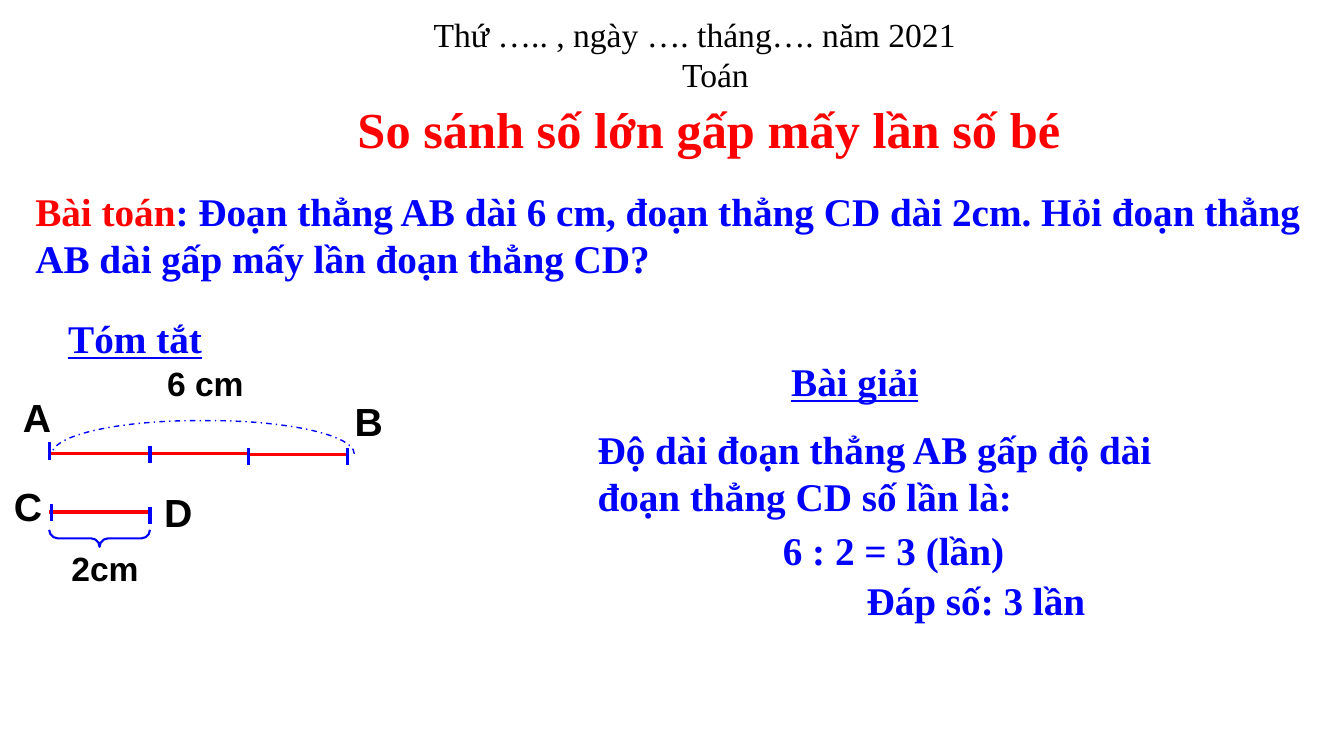
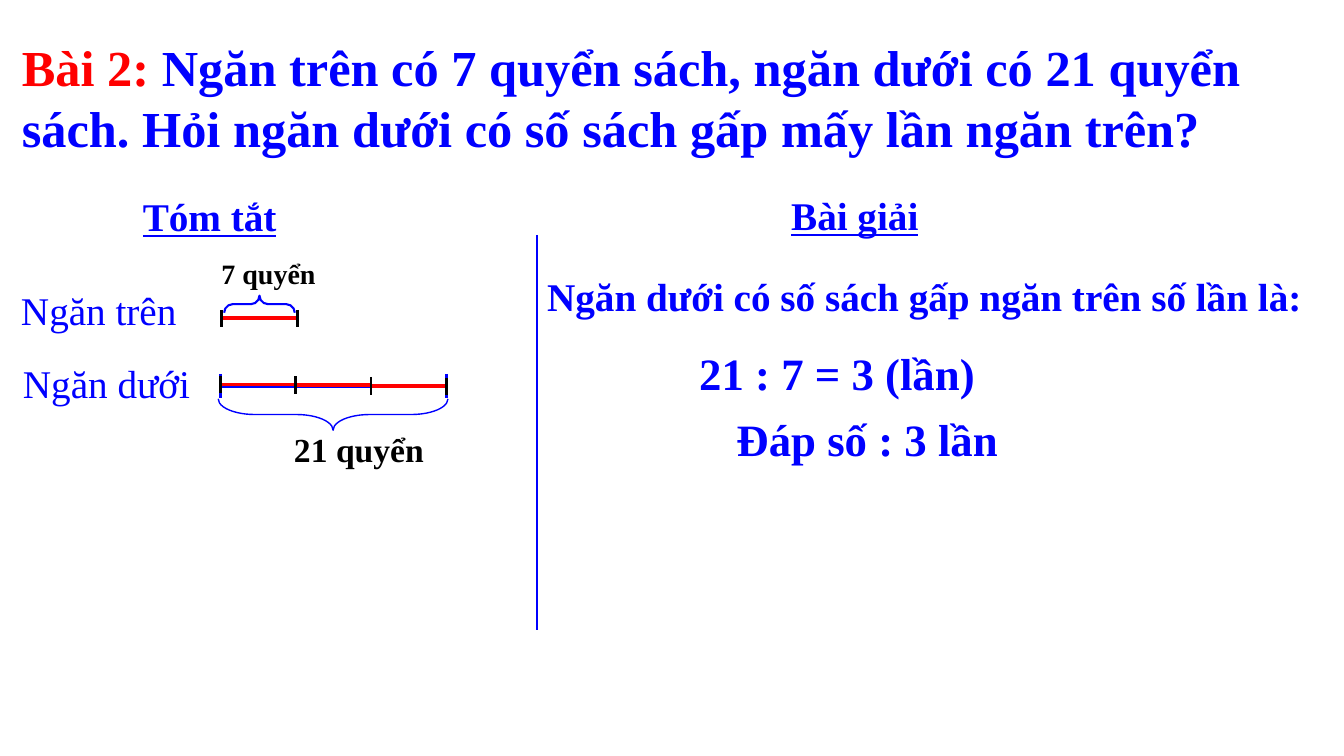
import pptx
import pptx.dml.color
import pptx.enum.dml
import pptx.enum.shapes
import pptx.enum.text
import pptx.oxml
import pptx.oxml.ns
import pptx.util

Cm = pptx.util.Cm
Pt = pptx.util.Pt
SHAPE = pptx.enum.shapes.MSO_SHAPE
COLORS = {"red": "FF0000", "blue": "0000FF", "black": "000000"}
SERIF, SANS = "Times New Roman", "Arial"


def rgb(name):
    return pptx.dml.color.RGBColor.from_string(COLORS[name])


class Lesson:
    """Holds the lesson's style and the slide being drawn."""

    def __init__(self):
        self.prs = pptx.Presentation()
        self.prs.slide_width = Cm(33.87)
        self.prs.slide_height = Cm(19.05)
        self.s = None

    def new_slide(self):
        self.s = self.prs.slides.add_slide(self.prs.slide_layouts[6])

    def format(self, r, size, color, font, bold, underline=False):
        r.font.size = Pt(size)
        r.font.name = font
        r.font.bold = bold
        r.font.underline = underline
        r.font.color.rgb = rgb(color)

    def text(self, x, y, w, h, text, size=28, color="blue", font=SERIF,
             bold=True, underline=False, lead=""):
        sp = self.s.shapes.add_textbox(Cm(x), Cm(y), Cm(w), Cm(h))
        tf = sp.text_frame
        tf.word_wrap = True
        p = tf.paragraphs[0]
        p.text = lead or text
        self.format(p.runs[0], size, "red" if lead else color, font, bold, underline)
        if lead:
            r = p.add_run()
            r.text = text
            self.format(r, size, color, font, bold, underline)
        return tf

    def heading(self, x, y, w, text):
        self.text(x, y, w, 1.45, text, underline=True)

    def label(self, x, y, w, h, text, size, font=SANS):
        self.text(x, y, w, h, text, size, "black", font)

    def date_header(self, date, subject):
        tf = self.text(9.83, 0.51, 16.4, 1.7, date, 24, "black", bold=False)
        tf.vertical_anchor = pptx.enum.text.MSO_ANCHOR.MIDDLE
        tf.paragraphs[0]._p.get_or_add_pPr().set("marL", str(Cm(0.85)))
        p = tf.add_paragraph()
        p.text = subject
        p.alignment = pptx.enum.text.PP_ALIGN.CENTER
        self.format(p.runs[0], 24, "black", SERIF, False)

    def line(self, x1, y1, x2, y2, color, width):
        sp = self.s.shapes.add_connector(
            pptx.enum.shapes.MSO_CONNECTOR.STRAIGHT, Cm(x1), Cm(y1), Cm(x2), Cm(y2))
        sp.line.color.rgb = rgb(color)
        sp.line.width = Pt(width)
        sp._element.spPr.append(pptx.oxml.parse_xml(
            "<a:effectLst %s/>" % pptx.oxml.ns.nsdecls("a")))

    def tick(self, x, top, height=0.43, color="blue", width=2.25):
        self.line(x, top, x, top + height, color, width)

    def bar(self, x, y, length):
        self.line(x, y, x + length, y, "red", 2.75)
        for end in (x, x + length):
            self.tick(end, y - 0.21, color="black", width=2)

    def span(self, x, y, w, h, adj, kind=SHAPE.LEFT_BRACE, width=1.5,
             flip=None, dash=None):
        sp = self.s.shapes.add_shape(
            kind, Cm(x + (w - h) / 2), Cm(y + (h - w) / 2), Cm(h), Cm(w))
        sp.rotation = 270
        sp.adjustments[0] = adj
        sp.shadow.inherit = False
        sp.fill.background()
        sp.line.color.rgb = rgb("blue")
        sp.line.width = Pt(width)
        if dash:
            sp.line.dash_style = dash
        if flip:
            sp._element.spPr.xfrm.set(flip, "1")


def segments_slide(d):
    d.new_slide()
    d.date_header("Thứ ….. , ngày …. tháng…. năm 2021", "Toán")
    d.text(8.76, 2.34, 18.42, 1.8, "So sánh số lớn gấp mấy lần số bé", 36, "red")
    d.text(0.64, 4.6, 32.82, 2.64,
           ": Đoạn thẳng AB dài 6 cm, đoạn thẳng CD dài 2cm. "
           "Hỏi đoạn thẳng AB dài gấp mấy lần đoạn thẳng CD?", lead="Bài toán")

    d.heading(1.47, 7.8, 5.08, "Tóm tắt")
    for name, x, y in (("A", 0.33, 9.78), ("B", 8.69, 9.88),
                       ("C", 0.1, 12.04), ("D", 3.89, 12.19)):
        d.label(x, y, 1.7, 1.45, name, 28)
    d.label(3.96, 9.02, 2.54, 1.27, "6 cm", 24)
    d.label(1.55, 13.69, 2.54, 1.27, "2cm", 24)
    for x, y, width in ((1.24, 11.43, 2), (3.73, 11.43, 2),
                        (6.22, 11.46, 2), (1.24, 12.9, 2.25)):
        d.line(x, y, x + 2.54, y, "red", width)
    for x, top in ((1.24, 11.15), (3.78, 11.23), (6.27, 11.28), (8.76, 11.28),
                   (1.3, 12.7), (3.78, 12.78)):
        d.tick(x, top)
    d.span(1.31, 10.6, 7.62, 0.84, 4.36, SHAPE.RIGHT_BRACKET, 1, "flipV",
           pptx.enum.dml.MSO_LINE.DASH_DOT)
    d.span(1.24, 13.35, 2.54, 0.43, 0.5)

    d.heading(19.69, 8.89, 4.45, "Bài giải")
    d.text(14.81, 10.59, 14.81, 2.62,
           "Độ dài đoạn thẳng AB gấp độ dài đoạn thẳng CD số lần là:")
    d.text(19.48, 13.13, 6.78, 1.45, "6 : 2 = 3 (lần)")
    d.text(21.59, 14.4, 7.82, 1.45, "Đáp số: 3 lần")


def books_slide(d):
    d.new_slide()
    d.text(0.3, 0.79, 33.22, 3.33,
           "Ngăn trên có 7 quyển sách, ngăn dưới có 21 quyển sách. "
           "Hỏi ngăn dưới có số sách gấp mấy lần ngăn trên?", 36, lead="Bài 2: ")

    d.heading(3.35, 4.72, 4.65, "Tóm tắt")
    d.text(0.28, 7.09, 4.65, 1.45, "Ngăn trên", bold=False)
    d.text(0.33, 8.94, 4.88, 1.45, "Ngăn dưới", bold=False)
    d.label(5.33, 6.35, 3.15, 1.12, "7 quyển", 20, SERIF)
    d.label(7.16, 10.69, 4.09, 1.27, "21 quyển", 24, SERIF)
    unit, left = 1.9, 5.55
    d.line(left, 9.73, left + 3 * unit, 9.73, "blue", 2.75)
    for x in (left, left + 3 * unit):
        d.tick(x, 9.42, 0.61, width=2)
    d.bar(5.59, 8.02, unit)
    for i in range(3):
        d.bar(left + i * unit, 9.69 + i * 0.02, unit)
    d.span(5.5, 10.05, 5.79, 0.79, 1.17, width=1)
    d.span(5.65, 7.45, 1.78, 0.43, 0.5, flip="flipH")
    d.line(13.54, 5.92, 13.54, 15.88, "blue", 1.5)

    d.heading(19.69, 4.7, 4.45, "Bài giải")
    d.text(13.54, 6.73, 19.69, 1.45, "Ngăn dưới có số sách gấp ngăn trên số lần là:")
    d.text(17.37, 8.59, 9.32, 1.63, "21 : 7 = 3 (lần)", 32)
    d.text(18.31, 10.26, 7.42, 1.63, "Đáp số : 3 lần", 32)


def main():
    d = Lesson()
    segments_slide(d)
    books_slide(d)
    d.prs.save("out.pptx")


if __name__ == "__main__":
    main()
